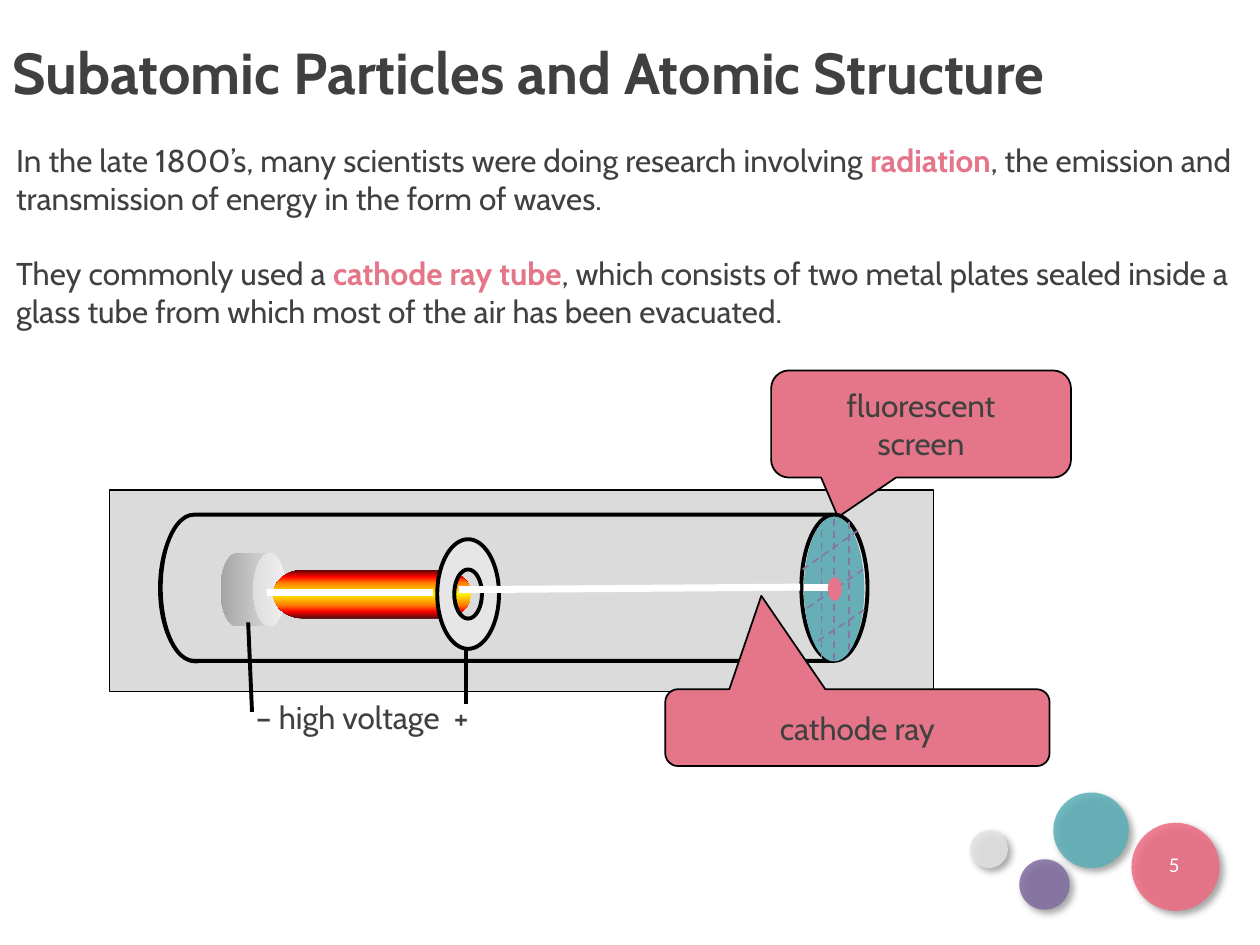
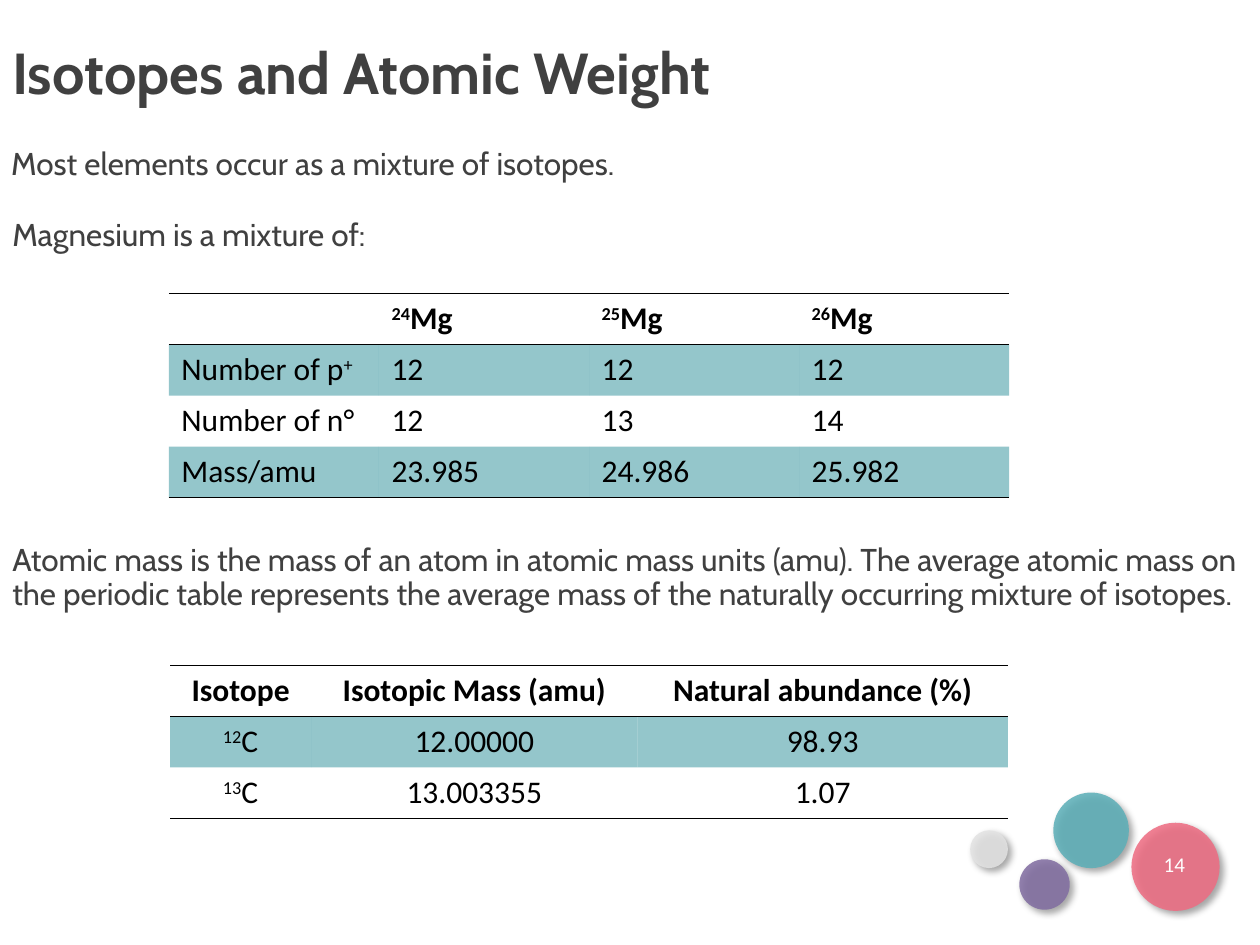
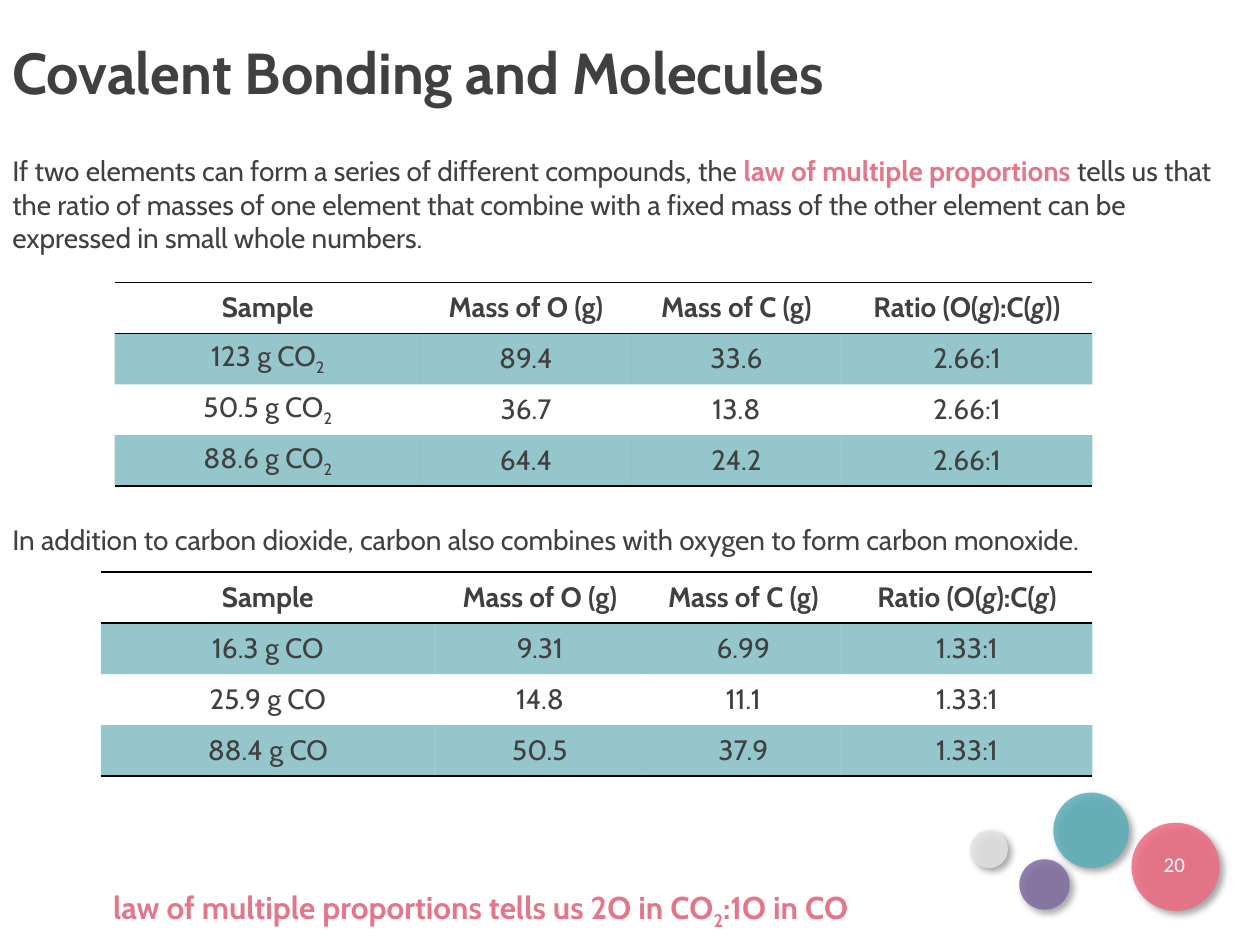
from lxml.etree import SubElement
from pptx import Presentation
from pptx.dml.color import RGBColor
from pptx.enum.dml import MSO_LINE_DASH_STYLE as Dash
from pptx.enum.shapes import MSO_CONNECTOR as Connector
from pptx.enum.shapes import MSO_SHAPE as Shape
from pptx.enum.text import MSO_ANCHOR as Anchor
from pptx.enum.text import PP_ALIGN as Align
from pptx.oxml import parse_xml
from pptx.oxml.ns import nsdecls, qn
from pptx.util import Inches, Pt

BLACK = RGBColor(0x00, 0x00, 0x00)
WHITE = RGBColor(0xFF, 0xFF, 0xFF)
INK = RGBColor(0x40, 0x40, 0x40)
PINK = RGBColor(0xE5, 0x76, 0x89)
TEAL = RGBColor(0x67, 0xAE, 0xB6)
PURPLE = RGBColor(0x87, 0x76, 0xA2)
GLASS = RGBColor(0xDB, 0xDB, 0xDB)
SILVER = RGBColor(0xE7, 0xE6, 0xE6)
STEEL = RGBColor(0xA5, 0xA5, 0xA5)
EMBER = RGBColor(0x4D, 0x08, 0x08)
RED = RGBColor(0xFF, 0x03, 0x00)
ORANGE = RGBColor(0xFF, 0x7A, 0x00)
YELLOW = RGBColor(0xFF, 0xF2, 0x00)

BUBBLES = [
    (7.7, 6.59, 0.3, RGBColor(0xE3, 0xE3, 0xE3)),
    (8.09, 6.82, 0.4, RGBColor(0x81, 0x6D, 0xA1)),
    (8.36, 6.29, 0.6, RGBColor(0x5C, 0xAF, 0xB8)),
    (8.98, 6.53, 0.7, RGBColor(0xEE, 0x6C, 0x82)),
]
BEAM = [(0, EMBER), (15, RED), (27, ORANGE), (50, YELLOW), (73, ORANGE), (85, RED), (100, EMBER)]
ROW_HEIGHT = Inches(1.62) // 4
PLAIN_TABLE = "{2D5ABB26-0587-4C30-8999-92F81FD0307C}"
ARC_PULL = 0.55
KEY_TERM = {"bold": True, "colour": PINK}
ITALIC = {"italic": True}
SUPER = {"baseline": 30}
SUB = {"baseline": -25}


def add_span(para, text, size=18, font="Cabin", colour=INK, bold=False, italic=False, baseline=0):
    """Append one formatted run to a paragraph."""
    span = para.add_run()
    span.text = text
    span.font.size = Pt(size)
    span.font.name = font
    span.font.color.rgb = colour
    span.font.bold = bold
    span.font.italic = italic
    if baseline:
        span.font._element.set("baseline", str(baseline * 1000))


def write_para(para, pieces, align=Align.LEFT, **format):
    """Fill a paragraph from a string or a list of strings and (text, format) pairs."""
    para.alignment = align
    for piece in [pieces] if isinstance(pieces, str) else pieces:
        text, extra = (piece, {}) if isinstance(piece, str) else piece
        if text:
            add_span(para, text, **{**format, **extra})


def fade(properties, percent):
    """Make the solid fill in a property element partly transparent."""
    colour = properties.find(qn("a:solidFill")).find(qn("a:srgbClr"))
    SubElement(colour, qn("a:alpha"), val=str(percent * 1000))


def rule_cell(cell, sides):
    """Draw black 1 pt borders on the named sides of a cell."""
    for index, side in enumerate(sides):
        border = parse_xml(
            f'<a:ln{side} {nsdecls("a")} w="12700"><a:solidFill>'
            f'<a:srgbClr val="{BLACK}"/></a:solidFill></a:ln{side}>'
        )
        cell._tc.get_or_add_tcPr().insert(index, border)


def round_corners(outline, middle):
    """Turn the straight quarters of an outline into elliptical arcs about its middle."""
    start = None
    for step in list(outline):
        point = step.find(qn("a:pt"))
        if point is None:
            continue
        end = int(point.get("x")), int(point.get("y"))
        if step.tag == qn("a:lnTo"):
            arc = SubElement(outline, qn("a:cubicBezTo"))
            pull_start = [a + ARC_PULL * (b - m) for a, b, m in zip(start, end, middle)]
            pull_end = [b + ARC_PULL * (a - m) for a, b, m in zip(start, end, middle)]
            for x, y in (pull_start, pull_end, end):
                SubElement(arc, qn("a:pt"), x=str(round(x)), y=str(round(y)))
            outline.replace(step, arc)
        start = end


class Deck:
    """Hold the shared style and the current page."""

    def __init__(self):
        """Start an empty 10 by 7.5 inch deck."""
        self.file = Presentation()
        self.file.slide_width = Inches(10)
        self.file.slide_height = Inches(7.5)
        self.page = None

    def add_page(self, title, number):
        """Add a page with its bubbles, number and title."""
        self.page = self.file.slides.add_slide(self.file.slide_layouts[6])
        for left, top, size, colour in BUBBLES:
            bubble = self.shape(Shape.OVAL, left, top, size, size, fill=colour)
            properties = bubble._element.spPr
            fade(properties, 86)
            effects = properties.find(qn("a:effectLst"))
            effects.append(parse_xml(
                f'<a:outerShdw {nsdecls("a")} blurRad="50800" dist="38100" dir="2700000" algn="tl" '
                f'rotWithShape="0"><a:srgbClr val="{BLACK}"><a:alpha val="40000"/></a:srgbClr></a:outerShdw>'
            ))
        self.text(9.13, 6.66, 0.38, 0.4, [str(number)], anchor=Anchor.MIDDLE, margin=0,
                  align=Align.CENTER, size=12, font="Calibri", colour=WHITE)
        self.text(0, 0.3, 10, 0.6, [title], anchor=Anchor.MIDDLE, spacing=0.9, size=33, bold=True)

    def text(self, left, top, width, height, paras, anchor=Anchor.TOP, margin=0.1,
             spacing=None, gap=0, **format):
        """Add a text box with one entry per paragraph."""
        box = self.page.shapes.add_textbox(Inches(left), Inches(top), Inches(width), Inches(height))
        frame = box.text_frame
        frame.margin_left = frame.margin_right = Inches(margin)
        self.fill_frame(frame, paras, anchor, spacing, gap, **format)

    def fill_frame(self, frame, paras, anchor, spacing=None, gap=0, **format):
        """Write paragraphs into a text frame, with a gap between them."""
        frame.word_wrap = True
        frame.vertical_anchor = anchor
        for index, pieces in enumerate(paras):
            para = frame.add_paragraph() if index else frame.paragraphs[0]
            if spacing:
                para.line_spacing = spacing
            if index and gap:
                para.space_before = Inches(gap)
            write_para(para, pieces, **format)

    def paint(self, shape, fill=None, line=None, weight=1.0):
        """Set fill and outline and drop the shadow."""
        shape.shadow.inherit = False
        if fill is None:
            shape.fill.background()
        else:
            shape.fill.solid()
            shape.fill.fore_color.rgb = fill
        if line is None:
            shape.line.fill.background()
        else:
            shape.line.color.rgb = line
            shape.line.width = Pt(weight)

    def shape(self, kind, left, top, width, height, adjust=(), turn=0, stops=(), **look):
        """Add a preset shape with a solid or a top-to-bottom gradient fill."""
        shape = self.page.shapes.add_shape(kind, Inches(left), Inches(top), Inches(width), Inches(height))
        shape.rotation = turn
        for index, value in enumerate(adjust):
            shape.adjustments[index] = value
        self.paint(shape, **look)
        if stops:
            shape.fill.gradient()
            shape.fill.gradient_angle = 270
            stop_list = shape._element.spPr.find(qn("a:gradFill")).find(qn("a:gsLst"))
            stop_list.clear()
            for place, colour in stops:
                stop = SubElement(stop_list, qn("a:gs"), pos=str(place * 1000))
                SubElement(stop, qn("a:srgbClr"), val=str(colour))
        return shape

    def callout(self, left, top, width, height, tip, paras):
        """Add a pink speech bubble whose tip is given in parts of its size."""
        shape = self.shape(Shape.ROUNDED_RECTANGULAR_CALLOUT, left, top, width, height,
                           adjust=(*tip, 0.167), fill=PINK, line=BLACK)
        self.fill_frame(shape.text_frame, paras, Anchor.MIDDLE, align=Align.CENTER)

    def line(self, start, end, colour=BLACK, weight=2.25, dash=None):
        """Add a straight line between two points."""
        line = self.page.shapes.add_connector(Connector.STRAIGHT, *map(Inches, (*start, *end)))
        line.line.color.rgb = colour
        line.line.width = Pt(weight)
        if dash:
            line.line.dash_style = dash
        SubElement(line._element.spPr, qn("a:effectLst"))

    def ring(self, left, top, width, height, hole, **look):
        """Add an elliptical ring whose hole has the given width and height."""
        middle = Inches(left + width / 2), Inches(top + height / 2)

        def corners(across, down, direction):
            x, y = Inches(across / 2), Inches(down / 2)
            sides = [(-x, 0), (0, -y), (x, 0), (0, y), (-x, 0)]
            return [(middle[0] + dx, middle[1] + dy) for dx, dy in sides[::direction]]

        rim, inside = corners(width, height, 1), corners(*hole, -1)
        builder = self.page.shapes.build_freeform(*rim[0])
        builder.add_line_segments(rim[1:], close=True)
        builder.move_to(*inside[0])
        builder.add_line_segments(inside[1:], close=True)
        ring = builder.convert_to_shape()
        outline = next(ring._element.iter(qn("a:path")))
        round_corners(outline, (ring.width / 2, ring.height / 2))
        self.paint(ring, **look)

    def table(self, left, top, widths, rows, align=Align.CENTER, **format):
        """Add a ruled table with a bold header and teal odd rows."""
        frame = self.page.shapes.add_table(len(rows), len(widths), Inches(left), Inches(top),
                                           Inches(sum(widths)), ROW_HEIGHT * len(rows))
        table = frame.table
        table.first_row = table.horz_banding = False
        table._tbl.tblPr.find(qn("a:tableStyleId")).text = PLAIN_TABLE
        for column, width in zip(table.columns, widths):
            column.width = Inches(width)
        for row, values in enumerate(rows):
            table.rows[row].height = ROW_HEIGHT
            for column, pieces in enumerate(values):
                cell = table.cell(row, column)
                cell.vertical_anchor = Anchor.MIDDLE
                write_para(cell.text_frame.paragraphs[0], pieces, align, bold=row == 0, **format)
                if row % 2:
                    cell.fill.solid()
                    cell.fill.fore_color.rgb = TEAL
                    fade(cell._tc.tcPr, 70)
                else:
                    cell.fill.background()
                if row == 0:
                    rule_cell(cell, "TB")
                elif row == len(rows) - 1:
                    rule_cell(cell, "B")


def draw_tube(deck):
    """Draw the cathode ray tube with its labels."""
    deck.shape(Shape.RECTANGLE, 0.87, 3.89, 6.54, 1.6, fill=GLASS, line=BLACK, weight=0.75)
    deck.callout(6.12, 2.94, 2.38, 0.85, (-0.277, 0.869), ["fluorescent", "screen"])
    deck.shape(Shape.OVAL, 1.27, 4.09, 0.57, 1.16, line=BLACK, weight=2.25)
    deck.shape(Shape.CAN, 3.5, 1.86, 1.16, 5.61, adjust=[0.453], turn=90,
               fill=GLASS, line=BLACK, weight=2.25)
    deck.shape(Shape.CAN, 1.72, 4.42, 0.58, 0.52, adjust=[0.5], turn=90,
               stops=[(0, SILVER), (100, STEEL)])
    deck.shape(Shape.OVAL, 6.38, 4.1, 0.48, 1.15, fill=TEAL)
    screen_grid = [
        ((6.81, 4.21), (6.37, 4.52)),
        ((6.86, 4.84), (6.47, 5.1)),
        ((6.85, 4.52), (6.4, 4.83)),
        ((6.52, 4.21), (6.52, 5.22)),
        ((6.62, 4.12), (6.62, 5.24)),
        ((6.74, 4.14), (6.74, 5.16)),
    ]
    for start, end in screen_grid:
        deck.line(start, end, PURPLE, 1, Dash.DASH)
    deck.line((6.59, 4.66), (6.38, 4.66), WHITE, 4)
    deck.shape(Shape.OVAL, 6.57, 4.58, 0.11, 0.19, fill=PINK)
    deck.line((1.97, 4.94), (2, 5.65))
    deck.line((3.7, 5.16), (3.7, 5.59))
    deck.text(1.8, 5.49, 2.15, 0.47, ["– high voltage  +"], align=Align.CENTER)
    deck.shape(Shape.FLOWCHART_TERMINATOR, 2.17, 4.52, 1.57, 0.39, stops=BEAM)
    deck.line((3.44, 4.7), (2.12, 4.7), WHITE, 4)
    deck.ring(3.47, 4.28, 0.49, 0.87, (0.22, 0.39), fill=SILVER, line=BLACK, weight=2.25)
    deck.line((6.35, 4.66), (3.64, 4.68), WHITE, 4)
    deck.callout(5.28, 5.47, 3.05, 0.61, (-0.25, -1.716), ["cathode ray"])


def add_structure_page(deck):
    """Build the page on subatomic particles."""
    deck.add_page("Subatomic Particles and Atomic Structure", 5)
    deck.text(0.03, 1.07, 10, 1.62, [
        ["In the late 1800’s, many scientists were doing research involving ", ("radiation", KEY_TERM),
         ", the emission and transmission of energy in the form of waves."],
        ["They commonly used a ", ("cathode ray tube", KEY_TERM),
         ", which consists of two metal plates sealed inside a glass tube from which most of the air "
         "has been evacuated."],
    ], gap=0.3)
    draw_tube(deck)


def add_isotope_page(deck):
    """Build the page on isotopes."""
    deck.add_page("Isotopes and Atomic Weight", 14)
    magnesium = [[(mass, SUPER), "Mg"] for mass in ("24", "25", "26")]
    deck.table(1.34, 2.33, [6.67 / 4] * 4, [
        ["", *magnesium],
        [["Number of p", ("+", SUPER)], "12", "12", "12"],
        ["Number of n°", "12", "13", "14"],
        ["Mass/amu", "23.985", "24.986", "25.982"],
    ], align=Align.LEFT, font="Calibri", colour=BLACK)
    deck.text(-0.01, 1.13, 9.33, 0.59, ["Most elements occur as a mixture of isotopes."], spacing=0.9)
    deck.text(0, 1.66, 6.17, 0.59, ["Magnesium is a mixture of:"])
    deck.text(0, 4.27, 10, 0.7, [
        "Atomic mass is the mass of an atom in atomic mass units (amu). The average atomic mass on the "
        "periodic table represents the average mass of the naturally occurring mixture of isotopes."
    ], spacing=0.9)
    deck.table(1.35, 5.28, [1.12, 2.59, 2.94], [
        ["Isotope", "Isotopic Mass (amu)", "Natural abundance (%)"],
        [[("12", SUPER), "C"], "12.00000", "98.93"],
        [[("13", SUPER), "C"], "13.003355", "1.07"],
    ], font="Calibri", colour=BLACK)


def add_bonding_page(deck):
    """Build the page on multiple proportions."""
    deck.add_page("Covalent Bonding and Molecules", 20)
    deck.text(0, 1.17, 10, 3.33, [
        ["If two elements can form a series of different compounds, the ",
         ("law of multiple proportions", KEY_TERM),
         " tells us that the ratio of masses of one element that combine with a fixed mass of the other "
         "element can be expressed in small whole numbers."],
        "In addition to carbon dioxide, carbon also combines with oxygen to form carbon monoxide.",
    ], gap=2.13, size=16)
    header = ["Sample", "Mass of O (g)", "Mass of C (g)"]
    ratio = ["Ratio (O(", ("g", ITALIC), "):C(", ("g", ITALIC)]
    monoxide = [("16.3", "9.31", "6.99"), ("25.9", "14.8", "11.1"), ("88.4", "50.5", "37.9")]
    dioxide = [("123", "89.4", "33.6"), ("50.5", "36.7", "13.8"), ("88.6", "64.4", "24.2")]
    deck.table(0.8, 4.54, [2.65, 1.67, 1.56, 1.99], [
        [*header, [*ratio, ")"]],
        *([f"{sample} g CO", oxygen, carbon, "1.33:1"] for sample, oxygen, carbon in monoxide),
    ], size=16)
    deck.table(0.91, 2.24, [2.43, 1.67, 1.67, 1.99], [
        [*header, [*ratio, "))"]],
        *([[f"{sample} g CO", ("2", SUB)], oxygen, carbon, "2.66:1"] for sample, oxygen, carbon in dioxide),
    ], size=16)
    deck.text(0.8, 7, 6.78, 0.4, [
        ["law of multiple proportions tells us 2O in CO", ("2", SUB), ":1O in CO"]
    ], **KEY_TERM)


def main():
    """Build the three pages and save the deck."""
    deck = Deck()
    add_structure_page(deck)
    add_isotope_page(deck)
    add_bonding_page(deck)
    deck.file.save("out.pptx")


if __name__ == "__main__":
    main()
